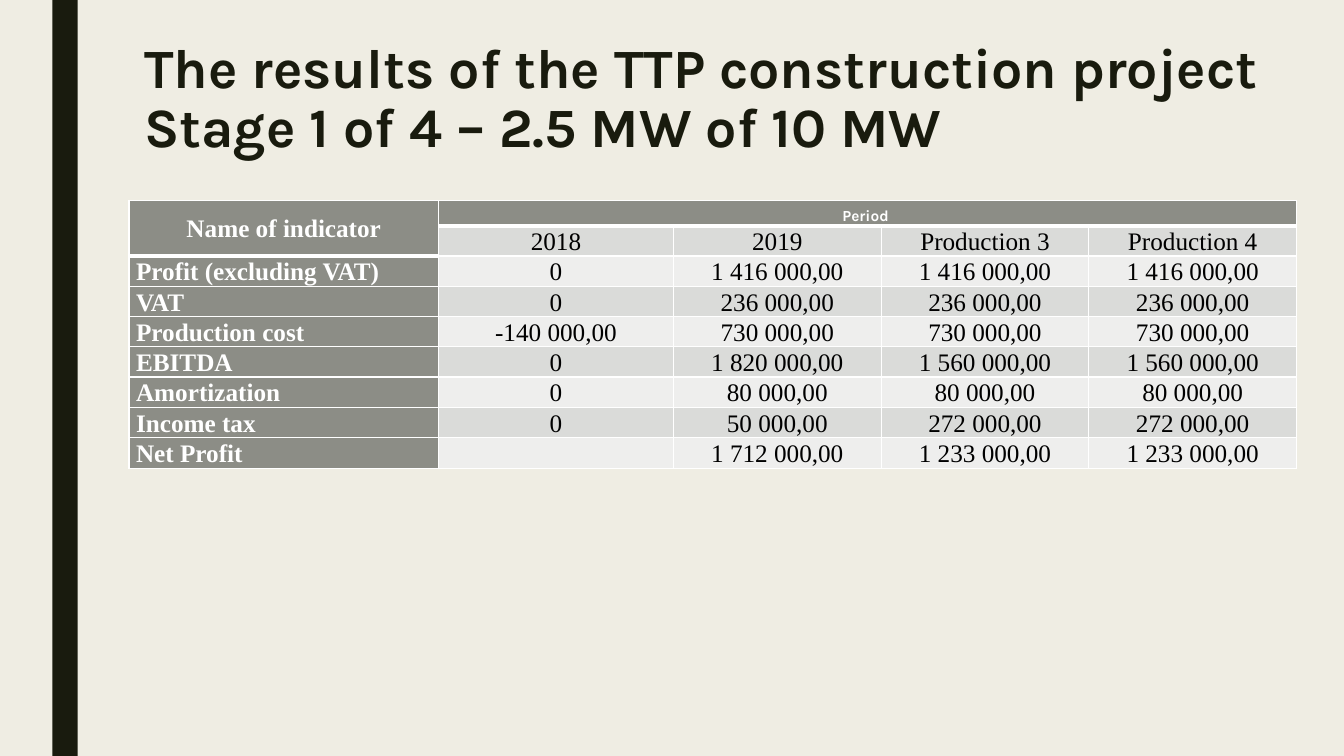
from pptx import Presentation
from pptx.dml.color import RGBColor as Rgb
from pptx.enum.shapes import MSO_SHAPE as Shape
from pptx.enum.text import MSO_ANCHOR as Anchor, MSO_AUTO_SIZE as Fit, PP_ALIGN as Align
from pptx.oxml.ns import qn
from pptx.util import Inches, Pt
from lxml.etree import SubElement as Sub

INK = {"page": "EFEDE3", "dark": "191B0E", "head": "8C8D86", "band": "DADBD9",
       "pale": "EEEEED", "white": "FFFFFF", "black": "000000"}
SERIF, SANS = "Times New Roman", "Karla"

TITLE = "The results of the TTP construction project \vStage 1 of 4 – 2.5 MW of 10 MW"
ROWS = [
    ["Name of indicator", "Period ", "", "", ""],
    ["", "2018", "2019", "Production 3", "Production 4"],
    ["Profit (excluding VAT)", "0"] + ["1 416 000,00"] * 3,
    ["VAT", "0"] + ["236 000,00"] * 3,
    ["Production cost", "-140 000,00"] + ["730 000,00"] * 3,
    ["EBITDA", "0", "1 820 000,00", "1 560 000,00", "1 560 000,00"],
    ["Amortization", "0"] + ["80 000,00"] * 3,
    ["Income tax", "0", "50 000,00", "272 000,00", "272 000,00"],
    ["Net Profit", "", "1 712 000,00", "1 233 000,00", "1 233 000,00"],
]
WIDTHS = [3.07, 2.33, 2.06, 2.06, 2.06]
HEIGHTS = [0.25] + [0.3] * 8


def tint(fill, name):
    fill.solid()
    fill.fore_color.rgb = Rgb.from_string(INK[name])


def write(frame, text, size=18, font=SERIF, color="black", bold=False,
          align=Align.CENTER, space=1.07):
    para = frame.paragraphs[0]
    para.text = text
    para.alignment, para.line_spacing = align, space
    for run in para.runs:
        run.font.size, run.font.name, run.font.bold = Pt(size), font, bold
        run.font.color.rgb = Rgb.from_string(INK[color])
    # Line breaks take the size of the text around them
    for gap in para._p.findall(qn("a:br")):
        Sub(gap, qn("a:rPr"), sz=str(round(size * 100)))


def edge(cell, side, width):
    line = Sub(cell._tc.get_or_add_tcPr(), qn("a:ln" + side), w=str(Pt(width)))
    Sub(Sub(line, qn("a:solidFill")), qn("a:srgbClr"), val=INK["white"])


def add_bar(slide):
    bar = slide.shapes.add_shape(Shape.RECTANGLE, Inches(0.52), 0, Inches(0.25), Inches(7.5))
    bar.shadow.inherit = False
    tint(bar.fill, "dark")
    bar.line.fill.background()


def add_title(slide):
    title = slide.shapes.title
    title.left, title.top = Inches(1.33), Inches(0.36)
    title.width, title.height = Inches(11.59), Inches(1.3)
    frame = title.text_frame
    frame.word_wrap, frame.auto_size = True, Fit.NONE
    frame.vertical_anchor = Anchor.TOP
    write(frame, TITLE, size=39.6, font=SANS, color="dark", bold=True,
          align=Align.LEFT, space=0.89)


def style_cell(cell, row, col, text):
    head = row == 0 or col == 0
    cell.margin_left = cell.margin_right = Inches(0.07)
    cell.margin_top = cell.margin_bottom = 0
    cell.vertical_anchor = Anchor.MIDDLE if row == col == 0 else Anchor.BOTTOM

    # The header rule is heavy: under Period, and under the name cell
    last = 1 if col == 0 else 0
    for side in "LRTB":
        heavy = (side == "B" and row <= last) or (side == "T" and row == last + 1)
        edge(cell, side, 3 if heavy else 1)
    tint(cell.fill, "head" if head else "band" if row % 2 else "pale")

    if text:
        period = row == 0 and col == 1
        write(cell.text_frame, text, size=11 if period else 18,
              font=SANS if period else SERIF, color="white" if head else "black",
              bold=head, align=Align.LEFT if col == 0 and row else Align.CENTER)


def add_grid(slide):
    grid = slide.shapes.add_table(len(ROWS), len(WIDTHS), Inches(1.28), Inches(1.99),
                                  Inches(sum(WIDTHS)), Inches(sum(HEIGHTS))).table
    grid.first_row = grid.horz_banding = False
    for col, width in zip(grid.columns, WIDTHS):
        col.width = Inches(width)
    for row, height in zip(grid.rows, HEIGHTS):
        row.height = Inches(height)
    for r, texts in enumerate(ROWS):
        for c, text in enumerate(texts):
            style_cell(grid.cell(r, c), r, c, text)
    grid.cell(0, 0).merge(grid.cell(1, 0))
    grid.cell(0, 1).merge(grid.cell(0, 4))


def main():
    deck = Presentation()
    deck.slide_width, deck.slide_height = Inches(13.33), Inches(7.5)
    slide = deck.slides.add_slide(deck.slide_layouts[5])
    tint(slide.background.fill, "page")
    add_bar(slide)
    add_title(slide)
    add_grid(slide)
    deck.save("out.pptx")


if __name__ == "__main__":
    main()
